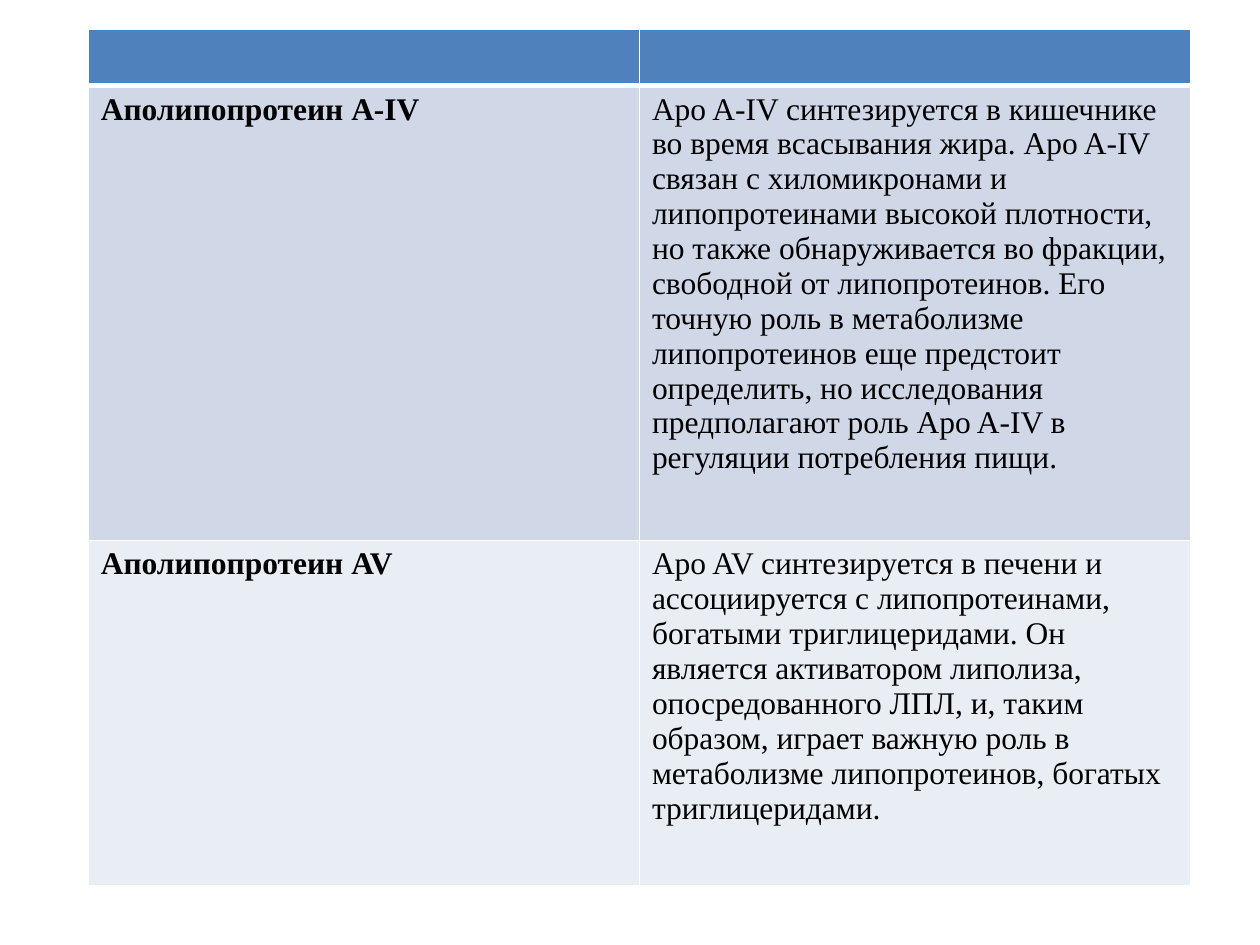
from pptx import Presentation
from pptx.dml.color import RGBColor
from pptx.oxml.ns import qn
from pptx.util import Inches, Pt
from lxml.etree import SubElement

COLORS = {
    "header": "4F81BD",
    "band_dark": "D0D8E8",
    "band_light": "E9EDF4",
    "border": "FFFFFF",
    "text": "000000",
}

APOLIPOPROTEINS = [
    ("Аполипопротеин A-IV",
     "Apo A-IV синтезируется в кишечнике во время всасывания жира. "
     "Apo A-IV связан с хиломикронами и липопротеинами высокой плотности, "
     "но также обнаруживается во фракции, свободной от липопротеинов. "
     "Его точную роль в метаболизме липопротеинов еще предстоит определить, "
     "но исследования предполагают роль Apo A-IV в регуляции потребления пищи."),
    ("Аполипопротеин AV",
     "Apo AV синтезируется в печени и ассоциируется с липопротеинами, "
     "богатыми триглицеридами. Он является активатором липолиза, "
     "опосредованного ЛПЛ, и, таким образом, играет важную роль в метаболизме "
     "липопротеинов, богатых триглицеридами."),
]

COLUMN_WIDTH = 4.375
ROW_HEIGHTS = [0.45, 3.61, 2.74]
ROW_FILLS = ["header", "band_dark", "band_light"]


def set_borders(cell, widths):
    """Draw the cell's borders; widths maps a side (L, R, T, B) to points."""
    properties = cell._tc.get_or_add_tcPr()
    for side, width in widths.items():
        line = SubElement(properties, qn(f"a:ln{side}"), w=str(Pt(width)))
        fill = SubElement(line, qn("a:solidFill"))
        SubElement(fill, qn("a:srgbClr"), val=COLORS["border"])


def set_fill(cell, color):
    cell.fill.solid()
    cell.fill.fore_color.rgb = RGBColor.from_string(COLORS[color])


def write_text(cell, text, bold):
    run = cell.text_frame.paragraphs[0].add_run()
    run.text = text
    font_format = {"name": "Times New Roman", "size": Pt(18), "bold": bold}
    for attribute, value in font_format.items():
        setattr(run.font, attribute, value)
    run.font.color.rgb = RGBColor.from_string(COLORS["text"])


def add_protein_table(slide):
    protein_table = slide.shapes.add_table(
        len(ROW_HEIGHTS), 2, Inches(0.7), Inches(0.23),
        Inches(2 * COLUMN_WIDTH), Inches(sum(ROW_HEIGHTS))).table
    for column in protein_table.columns:
        column.width = Inches(COLUMN_WIDTH)

    # Row heights, borders and fills; a thicker rule divides off the header
    for index, row in enumerate(protein_table.rows):
        row.height = Inches(ROW_HEIGHTS[index])
        widths = {"L": 1, "R": 1, "T": 3 if index == 1 else 1,
                  "B": 3 if index == 0 else 1}
        for cell in row.cells:
            set_borders(cell, widths)
            set_fill(cell, ROW_FILLS[index])

    # Protein names and descriptions
    for index, (protein, description) in enumerate(APOLIPOPROTEINS, start=1):
        write_text(protein_table.cell(index, 0), protein, True)
        write_text(protein_table.cell(index, 1), description, False)


def main():
    presentation = Presentation()
    presentation.slide_width = Inches(10)
    presentation.slide_height = Inches(7.5)
    # Blank layout: the slide holds only the table
    slide = presentation.slides.add_slide(presentation.slide_layouts[6])
    add_protein_table(slide)
    presentation.save("out.pptx")


if __name__ == "__main__":
    main()
